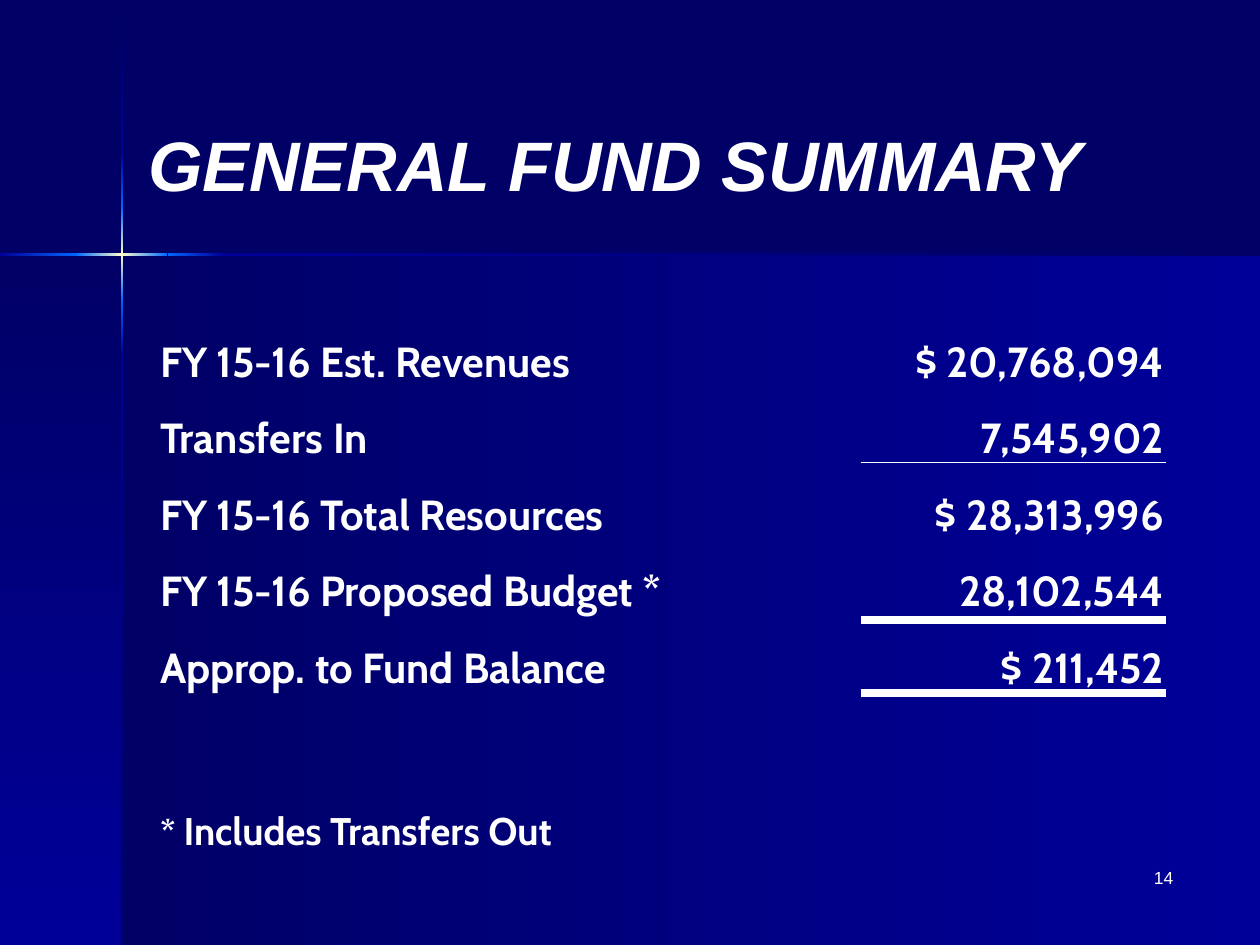
import copy
from dataclasses import dataclass

import pptx
import pptx.dml.color
import pptx.enum.shapes
import pptx.enum.text
import pptx.oxml.ns
import pptx.util
import pptx.slide
import pptx.table
from lxml import etree

RGBColor = pptx.dml.color.RGBColor
NAVY = RGBColor(0x00, 0x00, 0x66)
BLUE = RGBColor(0x00, 0x00, 0x99)
BRIGHT = RGBColor(0x00, 0x66, 0xFF)
CREAM = RGBColor(0xFF, 0xFF, 0xCC)
WHITE = RGBColor(0xFF, 0xFF, 0xFF)

PX = 914400 // 100  # 100 px to the inch
RIGHTWARD, DOWNWARD = 0, 270
NO_STYLE_NO_GRID = "{2D5ABB26-0587-4C30-8999-92F81FD0307C}"
LEFT = pptx.enum.text.PP_ALIGN.LEFT
RIGHT = pptx.enum.text.PP_ALIGN.RIGHT


@dataclass(frozen=True)
class GradientBox:
    left: int
    top: int
    width: int
    height: int
    angle: int
    colors: tuple[RGBColor, ...]


@dataclass(frozen=True)
class Rule:
    y: int
    points: float


@dataclass(frozen=True)
class Label:
    text: str
    left: int
    top: int
    width: int
    height: int
    size: int
    emphasis: bool
    align: pptx.enum.text.PP_ALIGN
    anchor: pptx.enum.text.MSO_ANCHOR
    margin_bottom: int


def vertical_ray(top: int, height: int, *colors: RGBColor) -> GradientBox:
    return GradientBox(96, top, 2, height, DOWNWARD, colors)


def horizontal_ray(left: int, width: int, *colors: RGBColor) -> GradientBox:
    return GradientBox(left, 201, width, 2, RIGHTWARD, colors)


BACKDROP = [
    GradientBox(97, 202, 903, 548, RIGHTWARD, (NAVY, BLUE)),
    GradientBox(0, 202, 97, 548, DOWNWARD, (NAVY, BLUE)),
    vertical_ray(165, 73, BRIGHT, CREAM, BRIGHT),
    horizontal_ray(133, 44, BRIGHT, BLUE),
    horizontal_ray(0, 61, BLUE, BRIGHT),
    vertical_ray(1, 120, NAVY, BLUE),
    vertical_ray(282, 468, BLUE, NAVY),
    horizontal_ray(177, 823, BLUE, NAVY),
    vertical_ray(238, 44, BRIGHT, BLUE),
    vertical_ray(121, 44, BLUE, BRIGHT),
    horizontal_ray(60, 73, BRIGHT, CREAM, BRIGHT),
]
TITLE = Label("GENERAL FUND SUMMARY", 108, 75, 825, 108, 40, True, LEFT,
              pptx.enum.text.MSO_ANCHOR.BOTTOM, 20)
PAGE_NUMBER = Label("14", 733, 683, 208, 50, 10, False, RIGHT,
                    pptx.enum.text.MSO_ANCHOR.TOP, 5)
SUMMARY = [
    ("FY 15-16 Est. Revenues", "$ 20,768,094"),
    ("Transfers In", "7,545,902"),
    ("FY 15-16 Total Resources", "$ 28,313,996"),
    ("FY 15-16 Proposed Budget *", "28,102,544"),
    ("Approp. to Fund Balance", "$ 211,452"),
]
COLUMN_WIDTHS = (519, 298)
ROW_HEIGHTS = (376, 64)
RULES = [Rule(367, 1), Rule(550, 4.5), Rule(492, 4.5)]


def add_gradient_box(slide: pptx.slide.Slide, box: GradientBox) -> None:
    shape = slide.shapes.add_shape(
        pptx.enum.shapes.MSO_SHAPE.RECTANGLE,
        box.left * PX, box.top * PX, box.width * PX, box.height * PX)
    shape.shadow.inherit = False
    shape.line.fill.background()
    shape.fill.gradient()
    shape.fill.gradient_angle = box.angle
    stop_list = shape.fill._fill._gradFill.gsLst
    for _ in box.colors[2:]:
        stop_list.append(copy.deepcopy(stop_list[0]))
    for index, (stop, color) in enumerate(zip(shape.fill.gradient_stops, box.colors)):
        stop.position = index / (len(box.colors) - 1)
        stop.color.rgb = color


def add_label(slide: pptx.slide.Slide, label: Label) -> None:
    shape = slide.shapes.add_textbox(
        label.left * PX, label.top * PX, label.width * PX, label.height * PX)
    frame = shape.text_frame
    frame.word_wrap = True
    frame.vertical_anchor = label.anchor
    frame.margin_bottom = label.margin_bottom * PX
    paragraph = frame.paragraphs[0]
    paragraph.text = label.text
    paragraph.alignment = label.align
    font = paragraph.font
    font.name, font.size = "Arial", pptx.util.Pt(label.size)
    font.bold = font.italic = label.emphasis
    font.color.rgb = WHITE


def fill_cell(cell: pptx.table._Cell, lines: list[str],
              align: pptx.enum.text.PP_ALIGN, size: int = 24) -> None:
    cell.text = "\n".join(lines)
    for paragraph in cell.text_frame.paragraphs:
        paragraph.alignment = align
        paragraph.line_spacing = 1.5
        font = paragraph.font
        font.name, font.size, font.bold = "Cabin", pptx.util.Pt(size), True
        font.color.rgb = WHITE


def add_summary_table(slide: pptx.slide.Slide) -> None:
    frame = slide.shapes.add_table(
        len(ROW_HEIGHTS), len(COLUMN_WIDTHS), 117 * PX, 242 * PX,
        sum(COLUMN_WIDTHS) * PX, sum(ROW_HEIGHTS) * PX)
    table = frame.table
    table.first_row = table.horz_banding = False
    table._tbl.tblPr.find(pptx.oxml.ns.qn("a:tableStyleId")).text = NO_STYLE_NO_GRID
    for column, width in zip(table.columns, COLUMN_WIDTHS):
        column.width = width * PX
    for row, height in zip(table.rows, ROW_HEIGHTS):
        row.height = height * PX
    for cell in table.iter_cells():
        cell.fill.background()

    names, amounts = zip(*SUMMARY)
    fill_cell(table.cell(0, 0), names, LEFT)
    fill_cell(table.cell(0, 1), amounts, RIGHT)
    footnote = table.cell(1, 0)
    fill_cell(footnote, ["* "], LEFT, 22)
    paragraph = footnote.text_frame.paragraphs[0]
    paragraph.runs[0].font.size = pptx.util.Pt(20)
    paragraph.add_run().text = "Includes Transfers Out"


def add_rule(slide: pptx.slide.Slide, rule: Rule) -> None:
    connector = slide.shapes.add_connector(
        pptx.enum.shapes.MSO_CONNECTOR.STRAIGHT,
        683 * PX, rule.y * PX, 925 * PX, rule.y * PX)
    connector.line.color.rgb = WHITE
    connector.line.width = pptx.util.Pt(rule.points)
    etree.SubElement(connector._element.spPr, pptx.oxml.ns.qn("a:effectLst"))


def main() -> None:
    presentation = pptx.Presentation()
    presentation.slide_width = 1000 * PX
    presentation.slide_height = 750 * PX
    slide = presentation.slides.add_slide(presentation.slide_layouts[6])
    slide.background.fill.solid()
    slide.background.fill.fore_color.rgb = NAVY
    for box in BACKDROP:
        add_gradient_box(slide, box)
    add_label(slide, PAGE_NUMBER)
    add_summary_table(slide)
    add_label(slide, TITLE)
    for rule in RULES:
        add_rule(slide, rule)
    presentation.save("out.pptx")


if __name__ == "__main__":
    main()
